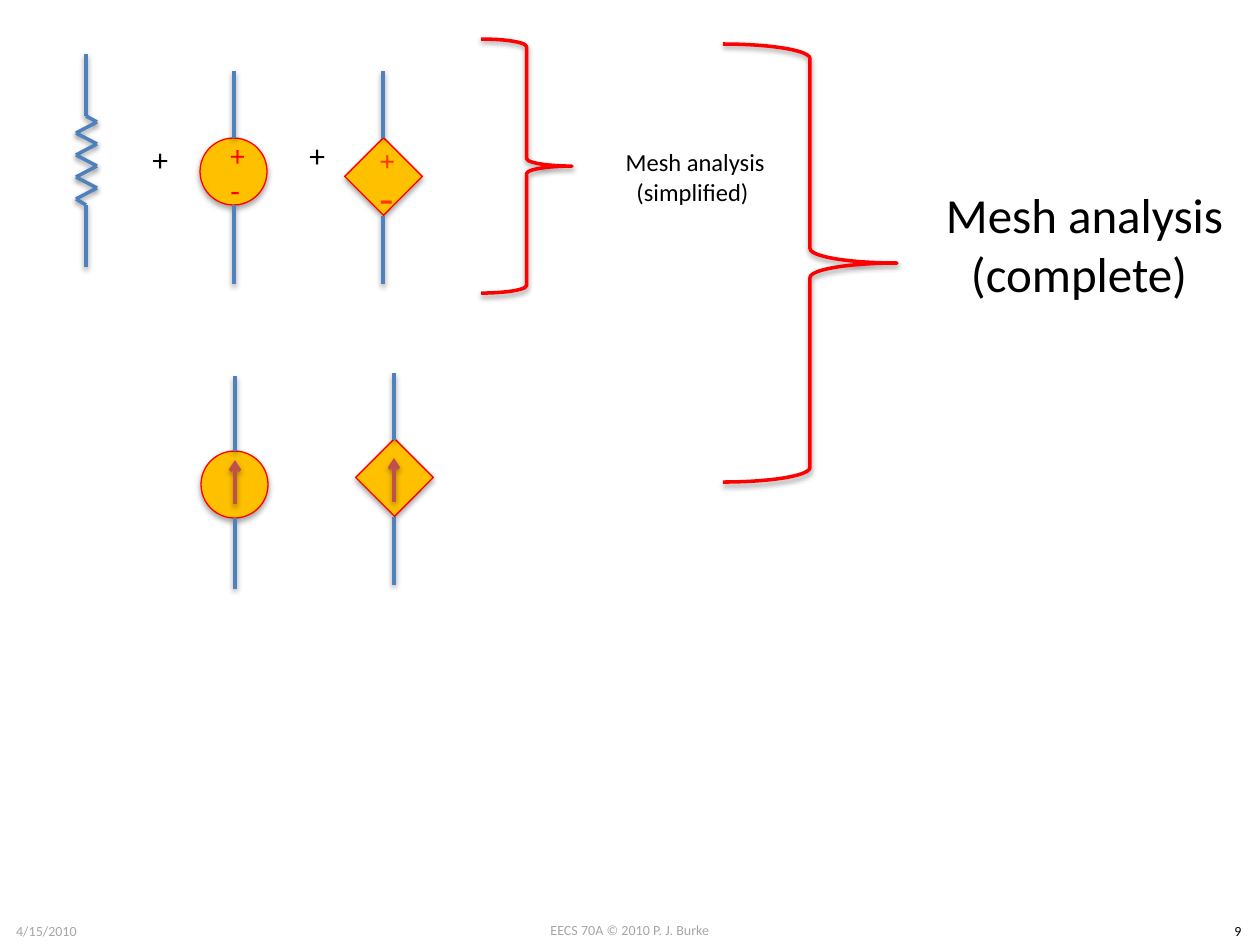
from lxml import etree
from pptx import Presentation, util as u
from pptx.dml.color import RGBColor
from pptx.enum import shapes, text
from pptx.oxml import parse_xml
from pptx.oxml.ns import nsdecls, qn

PX = 914400 / 126
THEME = {
    "wire": "4F81BD", "arrow": "C0504D", "outline": "FF0000", "source": "FFC000",
    "ink": "000000", "muted": "A6A6A6", "polarity": "FF3300",
    "body": "Calibri", "serif": "Times New Roman",
    "footer": 8, "note": 14, "sign": 18, "heading": 28,
    "thick": 2, "thin": 0.75,
}
SHAPE, ALIGN, ANCHOR = shapes.MSO_SHAPE, text.PP_ALIGN, text.MSO_ANCHOR


def style(shape, line, width, fill=None, opacity=38, distance=20000):
    """Set line, fill and a soft shadow that falls straight down."""
    shape.line.color.rgb = RGBColor.from_string(THEME[line])
    shape.line.width = u.Pt(THEME[width])
    if fill:
        shape.fill.solid()
        shape.fill.fore_color.rgb = RGBColor.from_string(THEME[fill])
    shape._element.spPr.append(parse_xml(
        f'<a:effectLst {nsdecls("a")}><a:outerShdw blurRad="40000" dist="{distance}" '
        f'dir="5400000" rotWithShape="0"><a:srgbClr val="000000">'
        f'<a:alpha val="{opacity * 1000}"/></a:srgbClr></a:outerShdw></a:effectLst>'))


def add_label(box, lines, size, color="ink", font="body", align=ALIGN.CENTER,
              wrap=True, anchor=ANCHOR.TOP, bold=False):
    label = slide.shapes.add_textbox(*(round(n * PX) for n in box))
    frame = label.text_frame
    for name, value in {"word_wrap": wrap, "vertical_anchor": anchor}.items():
        setattr(frame, name, value)
    frame.text = "\n".join(lines)
    for paragraph in frame.paragraphs:
        paragraph.alignment = align
        font_values = {"size": u.Pt(size), "name": THEME[font], "bold": bold}
        for name, value in font_values.items():
            setattr(paragraph.runs[0].font, name, value)
        paragraph.runs[0].font.color.rgb = RGBColor.from_string(THEME[color])


presentation = Presentation()
presentation.slide_width = round(1260 * PX)
presentation.slide_height = round(945 * PX)
slide = presentation.slides.add_slide(presentation.slide_layouts[6])

# Footer
for box, words, color in [
    ((483, 915, 294, 30), "EECS 70A © 2010 P. J. Burke", "muted"),
    ((0, 916, 93, 30), "4/15/2010", "muted"),
    ((1216, 916, 44, 30), "9", "ink"),
]:
    add_label(box, [words], THEME["footer"], color)

# Source bodies: circles are independent, diamonds are dependent
for kind, left, top, size, rotation in [
    (SHAPE.OVAL, 200, 138, 67, 0),
    (SHAPE.RECTANGLE, 356, 149, 55, 45),
    (SHAPE.OVAL, 201, 451, 67, 0),
    (SHAPE.RECTANGLE, 367, 450, 55, 45),
]:
    body = slide.shapes.add_shape(kind, *(round(n * PX) for n in (left, top, size, size)))
    body.rotation = rotation
    style(body, "outline", "thin", "source", opacity=35, distance=23000)

# Wires, resistor zigzag and current arrows
zigzag = [(97 if i % 2 == 0 else 76, 122 + 11 * i) for i in range(8)]
resistor = [(86, 54), (86, 116), *zigzag, (86, 205), (86, 267)]
segments = [(*start, *end, "wire") for start, end in zip(resistor, resistor[1:])]
for x, top, body_top, body_bottom, bottom in [
    (234, 71, 138, 205, 284),
    (383, 71, 138, 216, 284),
    (235, 376, 451, 518, 589),
    (394, 373, 440, 517, 585),
]:
    segments += [(x, body_top, x, top, "wire"), (x, body_bottom, x, bottom, "wire")]
segments += [(235, 504, 235, 460, "arrow"), (394, 502, 394, 458, "arrow")]

for *ends, color in segments:
    connector = slide.shapes.add_connector(
        shapes.MSO_CONNECTOR.STRAIGHT, *(round(n * PX) for n in ends))
    style(connector, color, "thick")
    if color == "arrow":
        etree.SubElement(connector.line._get_or_add_ln(), qn("a:tailEnd"), type="arrow")

# Polarity signs
for left, top, sign, size, color, font, bold in [
    (367, 139, "+", 16, "polarity", "serif", True),
    (367, 175, "-", 24, "polarity", "serif", False),
    (218, 134, "+", 16.6, "outline", "body", False),
    (218, 169, "-", 18, "outline", "body", False),
]:
    add_label((left, top, 33, 42), [sign], size, color, font,
              anchor=ANCHOR.MIDDLE, bold=bold)

# Plus signs between the elements
for left, top in [(297, 130), (140, 134)]:
    add_label((left, top, 42, 50), ["+"], THEME["sign"], align=ALIGN.LEFT, wrap=False)

# Braces and what they lead to
for box in [(481, 39, 91, 254), (723, 44, 174, 438)]:
    brace = slide.shapes.add_shape(SHAPE.LEFT_BRACE, *(round(n * PX) for n in box))
    brace.rotation = 180
    brace.fill.background()
    style(brace, "outline", "thick")

add_label((607, 141, 171, 72), [" Mesh analysis", "(simplified)"], THEME["note"], wrap=False)
add_label((912, 178, 334, 131), [" Mesh analysis", "(complete)"], THEME["heading"])

presentation.save("out.pptx")
